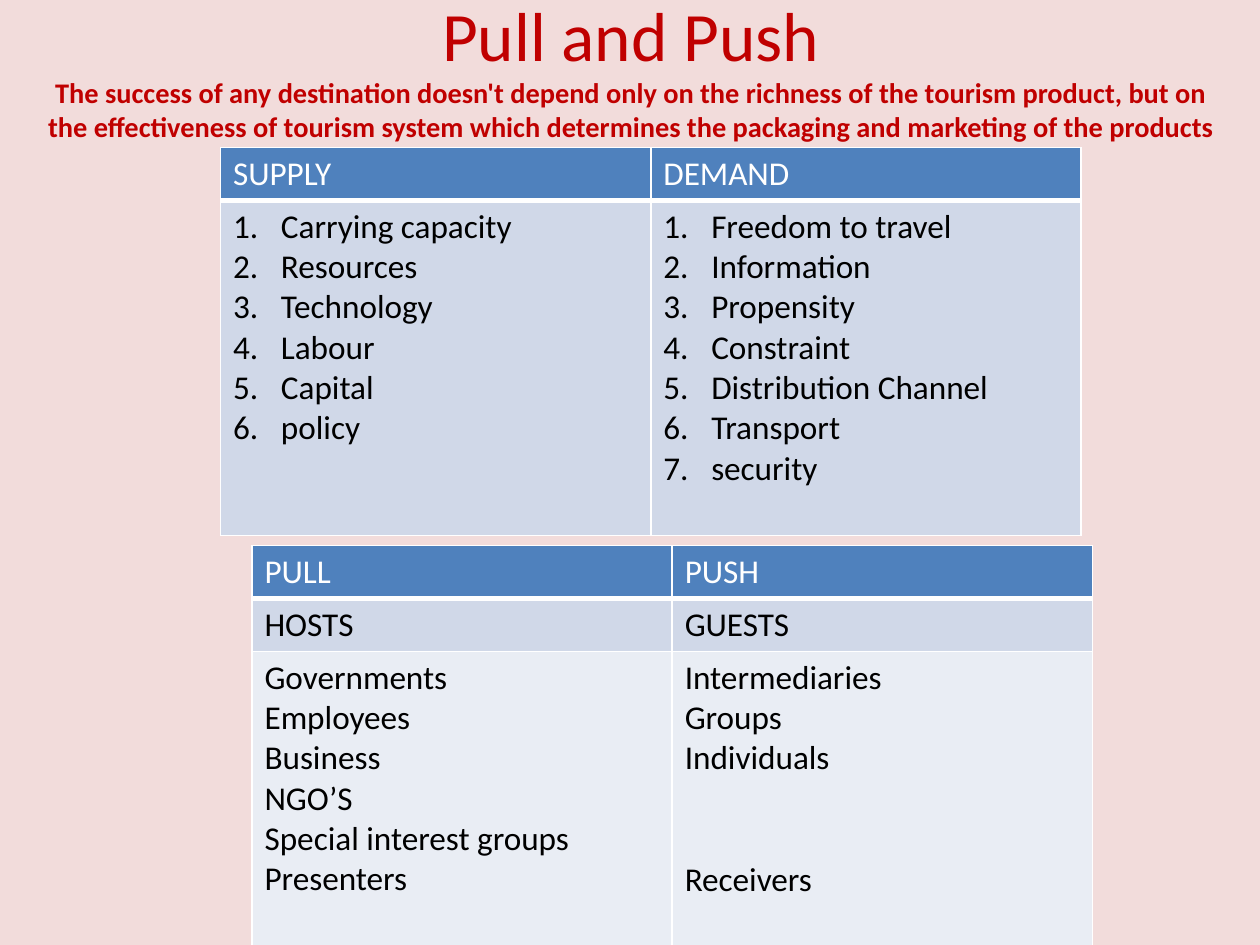
"""Build the Pull and Push slide with its supply/demand and pull/push tables."""
from lxml import etree
from pptx import Presentation
from pptx.dml.color import RGBColor
from pptx.enum.text import MSO_ANCHOR, PP_ALIGN
from pptx.oxml.ns import qn
from pptx.util import Inches, Pt

MIDDLE, CENTER = MSO_ANCHOR.MIDDLE, PP_ALIGN.CENTER

THEME = {
    "font": "Calibri", "title": 39.6, "subtitle": 16.2, "body": 19,
    "background": "F2DCDB", "accent": "C00000", "text": "000000",
    "header_text": "FFFFFF", "border": "FFFFFF",
    "fills": ["4F81BD", "D0D8E8", "E9EDF4"],
}
LINE_FACTOR = 1.22

TITLE = "Pull and Push"
SUBTITLE = ("The success of any destination doesn't depend only on the richness of the "
            "tourism product, but on the effectiveness of tourism system which determines "
            "the packaging and marketing of the products")

TABLES = [
    {"at": (1.75, 1.17), "width": 6.83, "heights": [0.42, 2.66], "numbered": True,
     "rows": [
         [["SUPPLY"], ["DEMAND"]],
         [["Carrying capacity", "Resources", "Technology", "Labour", "Capital", "policy"],
          ["Freedom to travel", "Information", "Propensity", "Constraint",
           "Distribution Channel", "Transport", "security"]],
     ]},
    {"at": (2, 4.33), "width": 6.67, "heights": [0.42, 0.42, 2.34], "numbered": False,
     "rows": [
         [["PULL"], ["PUSH"]],
         [["HOSTS"], ["GUESTS"]],
         [["Governments", "Employees", "Business", "NGO’S", "Special interest groups",
           "Presenters"],
          ["Intermediaries", "Groups", "Individuals", "Receivers"]],
     ]},
]
LINES_ABOVE = {"Receivers": 2}


def style(r, size, color, bold=False):
    r.font.name = THEME["font"]
    r.font.size = Pt(size)
    r.font.bold = bold
    r.font.color.rgb = RGBColor.from_string(color)


def number(p):
    pPr = p._p.get_or_add_pPr()
    indent = Inches(0.38)
    pPr.set("marL", str(indent))
    pPr.set("indent", str(-indent))
    etree.SubElement(pPr, qn("a:buAutoNum"), type="arabicPeriod")


def set_borders(cell, bottom):
    tcPr = cell._tc.get_or_add_tcPr()
    for side, width in (("L", 1), ("R", 1), ("T", 1), ("B", bottom)):
        ln = etree.SubElement(tcPr, qn(f"a:ln{side}"), w=str(Pt(width)))
        fill = etree.SubElement(ln, qn("a:solidFill"))
        etree.SubElement(fill, qn("a:srgbClr"), val=THEME["border"])


def fill_cell(cell, lines, row, numbered):
    header = row == 0
    set_borders(cell, 3 if header else 1)
    cell.fill.solid()
    cell.fill.fore_color.rgb = RGBColor.from_string(THEME["fills"][row])
    tf = cell.text_frame
    tf.text = "\n".join(lines)
    for p in tf.paragraphs:
        if p.text in LINES_ABOVE:
            p.space_before = Pt(round(LINES_ABOVE[p.text] * THEME["body"] * LINE_FACTOR, 1))
        if numbered and not header:
            number(p)
        style(p.runs[0], THEME["body"], THEME["header_text" if header else "text"])


def add_title(s):
    title = s.shapes.title
    title.left, title.top = Inches(0.17), Inches(0)
    title.width, title.height = Inches(9.67), Inches(1.08)
    tf = title.text_frame
    tf.word_wrap = True
    tf.vertical_anchor = MIDDLE
    tf.text = f"{TITLE}\v{SUBTITLE}"
    p = tf.paragraphs[0]
    p.alignment = CENTER
    heading, subtitle = p.runs
    style(heading, THEME["title"], THEME["accent"])
    style(subtitle, THEME["subtitle"], THEME["accent"], bold=True)


def add_grid(s, data):
    rows, heights = data["rows"], data["heights"]
    left, top = data["at"]
    columns = len(rows[0])
    table = s.shapes.add_table(len(rows), columns, Inches(left), Inches(top),
                               Inches(data["width"]), Inches(sum(heights))).table
    for column in table.columns:
        column.width = Inches(data["width"] / columns)
    for i, (cells, height) in enumerate(zip(rows, heights)):
        table.rows[i].height = Inches(height)
        for j, lines in enumerate(cells):
            fill_cell(table.cell(i, j), lines, i, data["numbered"])


def main():
    prs = Presentation()
    prs.slide_width, prs.slide_height = Inches(10), Inches(7.5)
    s = prs.slides.add_slide(prs.slide_layouts[5])
    s.background.fill.solid()
    s.background.fill.fore_color.rgb = RGBColor.from_string(THEME["background"])
    add_title(s)
    for data in TABLES:
        add_grid(s, data)
    prs.save("out.pptx")


if __name__ == "__main__":
    main()
